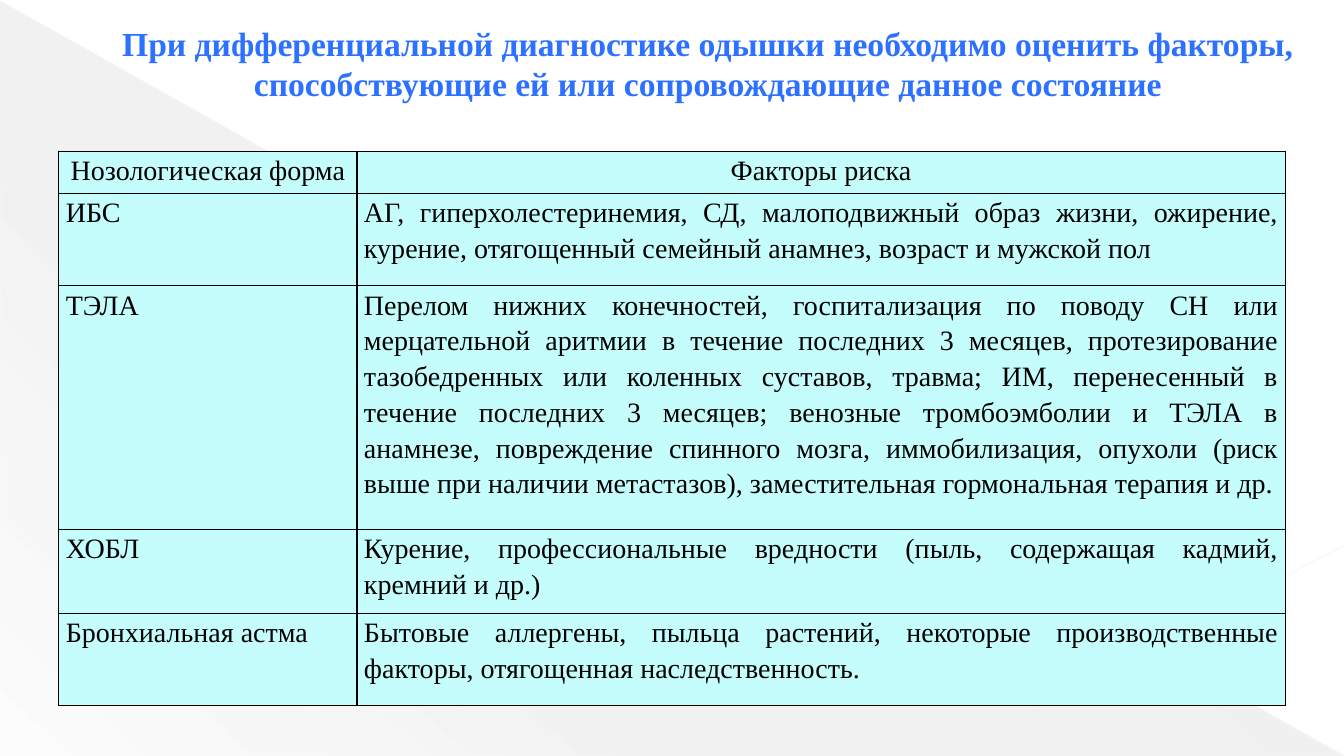
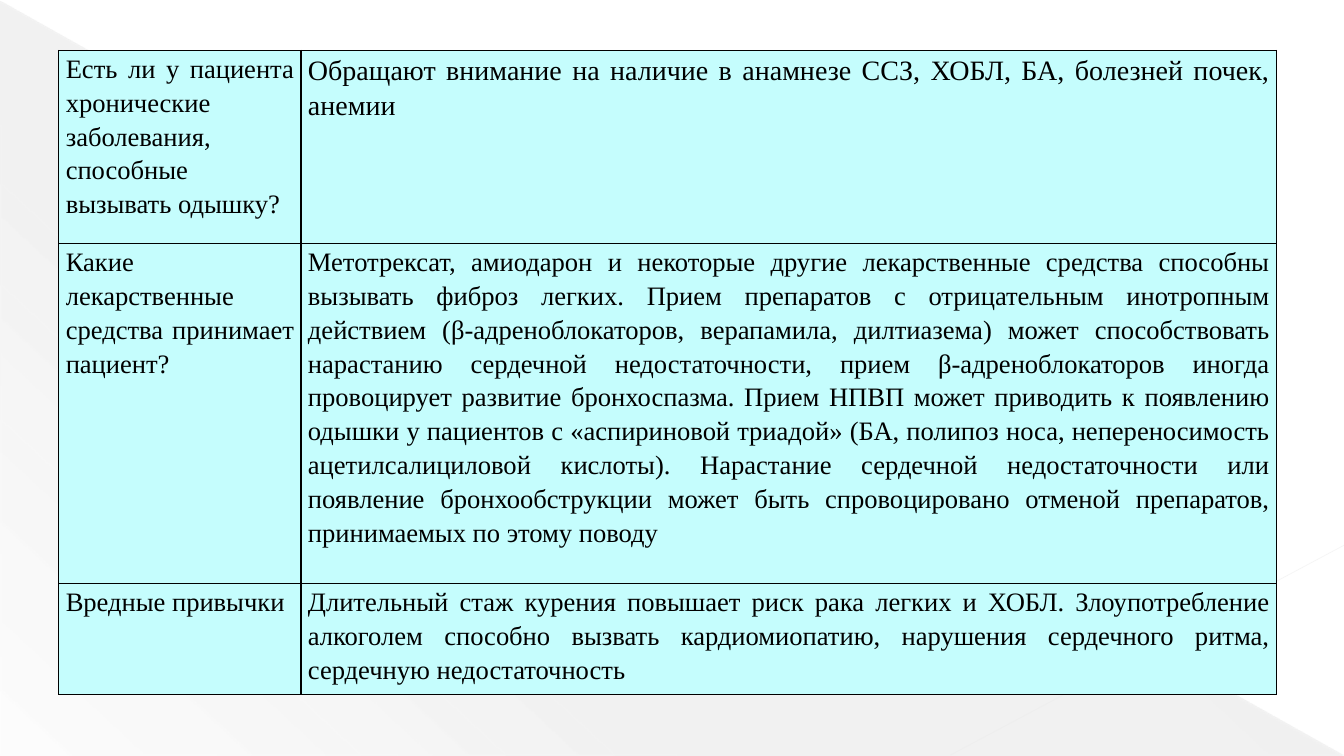
from dataclasses import dataclass

import pptx
import pptx.dml.color
import pptx.enum.dml
import pptx.enum.shapes
import pptx.enum.text
import pptx.oxml
import pptx.oxml.ns
import pptx.presentation
import pptx.slide
import pptx.table
import pptx.text.text
import pptx.util

Pt = pptx.util.Pt
Align = pptx.enum.text.PP_ALIGN
DRAWING_NS = pptx.oxml.ns.nsdecls("a")

FONT = "Times New Roman"
WHITE, BLACK, TITLE_BLUE, CELL_CYAN = "FFFFFF", "000000", "2C71FF", "C5FDFD"
SHADE = "666666"
SHADE_STOPS = ((0, 10), (70, 8), (100, 1))
SHADE_ANGLE = 133
SLIDE_WIDTH, SLIDE_HEIGHT = 960, 540
TABLE_LEFT = 42
CELL_INSET = 5


@dataclass(frozen=True)
class BackdropLine:
    start: tuple[float, float]
    end: tuple[float, float]
    color: str
    width: float
    opacity: int


@dataclass(frozen=True)
class CellText:
    text: str
    size: float = 20
    align: Align = Align.JUSTIFY


@dataclass(frozen=True)
class FactorTable:
    top: float
    columns: tuple[float, ...]
    row_heights: tuple[float, ...]
    rows: tuple[tuple[CellText, ...], ...]


BACKDROP_LINES = (
    BackdropLine((0, 0.72), (959, 539.3), "E8E8E8", 0.39, 35),
    BackdropLine((960, 389.5), (679, 539.3), "EAEAEA", 0.47, 45),
)

TITLE = (
    "При дифференциальной диагностике одышки необходимо оценить факторы,",
    "способствующие ей или сопровождающие данное состояние",
)

RISK_FACTORS = FactorTable(
    top=108,
    columns=(213, 663),
    row_heights=(30, 66, 174, 60, 66),
    rows=(
        (
            CellText("Нозологическая форма", align=Align.CENTER),
            CellText("Факторы риска", align=Align.CENTER),
        ),
        (
            CellText("ИБС"),
            CellText(
                "АГ, гиперхолестеринемия, СД, малоподвижный образ жизни, ожирение, "
                "курение, отягощенный семейный анамнез, возраст и мужской пол"
            ),
        ),
        (
            CellText("ТЭЛА"),
            CellText(
                "Перелом нижних конечностей, госпитализация по поводу СН или "
                "мерцательной аритмии в течение последних 3 месяцев, протезирование "
                "тазобедренных или коленных суставов, травма; ИМ, перенесенный в "
                "течение последних 3 месяцев; венозные тромбоэмболии и ТЭЛА в "
                "анамнезе, повреждение спинного мозга, иммобилизация, опухоли (риск "
                "выше при наличии метастазов), заместительная гормональная терапия и др."
            ),
        ),
        (
            CellText("ХОБЛ"),
            CellText(
                "Курение, профессиональные вредности (пыль, содержащая кадмий, "
                "кремний и др.)"
            ),
        ),
        (
            CellText("Бронхиальная астма"),
            CellText(
                "Бытовые аллергены, пыльца растений, некоторые производственные "
                "факторы, отягощенная наследственность."
            ),
        ),
    ),
)

PATIENT_QUESTIONS = FactorTable(
    top=36,
    columns=(173, 697),
    row_heights=(138, 243, 79),
    rows=(
        (
            CellText(
                "Есть ли у пациента хронические заболевания, способные вызывать одышку?",
                19,
            ),
            CellText(
                "Обращают внимание на наличие в анамнезе ССЗ, ХОБЛ, БА, болезней "
                "почек, анемии"
            ),
        ),
        (
            CellText("Какие лекарственные средства принимает пациент?", 19),
            CellText(
                "Метотрексат, амиодарон и некоторые другие лекарственные средства "
                "способны вызывать фиброз легких. Прием препаратов с отрицательным "
                "инотропным действием (β-адреноблокаторов, верапамила, дилтиазема) "
                "может способствовать нарастанию сердечной недостаточности, прием "
                "β-адреноблокаторов иногда провоцирует развитие бронхоспазма. Прием "
                "НПВП может приводить к появлению одышки у пациентов с «аспириновой "
                "триадой» (БА, полипоз носа, непереносимость ацетилсалициловой "
                "кислоты). Нарастание сердечной недостаточности или появление "
                "бронхообструкции может быть спровоцировано отменой препаратов, "
                "принимаемых по этому поводу",
                19,
            ),
        ),
        (
            CellText("Вредные привычки", 19),
            CellText(
                "Длительный стаж курения повышает риск рака легких и ХОБЛ. "
                "Злоупотребление алкоголем способно вызвать кардиомиопатию, нарушения "
                "сердечного ритма, сердечную недостаточность",
                19,
            ),
        ),
    ),
)


def rgb(value: str) -> pptx.dml.color.RGBColor:
    return pptx.dml.color.RGBColor.from_string(value)


def color_xml(value: str, opacity: int = 100) -> str:
    return f'<a:srgbClr val="{value}"><a:alpha val="{opacity * 1000}"/></a:srgbClr>'


def style_paragraph(
    paragraph: pptx.text.text._Paragraph, size: float, color: str, align: Align
) -> None:
    paragraph.alignment = align
    paragraph.font.name = FONT
    paragraph.font.size = Pt(size)
    paragraph.font.color.rgb = rgb(color)


def draw_backdrop(slide: pptx.slide.Slide) -> None:
    slide.background.fill.solid()
    slide.background.fill.fore_color.rgb = rgb(WHITE)
    corner = slide.shapes.add_shape(
        pptx.enum.shapes.MSO_SHAPE.RIGHT_TRIANGLE, Pt(0.72), Pt(1.4), Pt(958.6), Pt(538.6)
    )
    corner.shadow.inherit = False
    corner.line.fill.background()
    corner.fill.background()
    stops = "".join(
        f'<a:gs pos="{position * 1000}">{color_xml(SHADE, opacity)}</a:gs>'
        for position, opacity in SHADE_STOPS
    )
    gradient = pptx.oxml.parse_xml(
        f'<a:gradFill {DRAWING_NS} rotWithShape="1"><a:gsLst>{stops}</a:gsLst>'
        f'<a:lin ang="{SHADE_ANGLE * 60000}" scaled="0"/></a:gradFill>'
    )
    properties = corner._element.spPr
    properties.replace(properties.find(pptx.oxml.ns.qn("a:noFill")), gradient)
    for line in BACKDROP_LINES:
        draw_line(slide, line)


def draw_line(slide: pptx.slide.Slide, line: BackdropLine) -> None:
    ray = slide.shapes.add_connector(
        pptx.enum.shapes.MSO_CONNECTOR.STRAIGHT,
        *(Pt(value) for value in line.start + line.end),
    )
    ray.line.width = Pt(line.width)
    ray.line.color.rgb = rgb(line.color)
    properties = ray._element.spPr
    tint = properties.find(".//" + pptx.oxml.ns.qn("a:srgbClr"))
    tint.append(
        pptx.oxml.parse_xml(f'<a:alpha {DRAWING_NS} val="{line.opacity * 1000}"/>')
    )
    properties.append(pptx.oxml.parse_xml(f"<a:effectLst {DRAWING_NS}/>"))


def draw_title(slide: pptx.slide.Slide, lines: tuple[str, ...]) -> None:
    frame = slide.shapes.add_textbox(Pt(39.6), Pt(12), Pt(902), Pt(66)).text_frame
    frame.word_wrap = True
    frame.vertical_anchor = pptx.enum.text.MSO_ANCHOR.MIDDLE
    frame.text = "\n".join(lines)
    for paragraph in frame.paragraphs:
        style_paragraph(paragraph, 24, TITLE_BLUE, Align.CENTER)
        paragraph.font.bold = True
        paragraph._p.get_or_add_pPr().set("indent", str(Pt(30)))


def draw_borders(cell: pptx.table._Cell) -> None:
    properties = cell._tc.get_or_add_tcPr()
    for index, side in enumerate("LRTB"):
        border = pptx.oxml.parse_xml(
            f'<a:ln{side} {DRAWING_NS} w="{Pt(1)}"><a:solidFill>'
            f"{color_xml(BLACK)}</a:solidFill></a:ln{side}>"
        )
        properties.insert(index, border)


def fill_cell(cell: pptx.table._Cell, content: CellText) -> None:
    cell.margin_left = cell.margin_right = Pt(CELL_INSET)
    cell.margin_top = cell.margin_bottom = Pt(0)
    cell.fill.solid()
    cell.fill.fore_color.rgb = rgb(CELL_CYAN)
    draw_borders(cell)
    cell.text = content.text
    paragraph = cell.text_frame.paragraphs[0]
    style_paragraph(paragraph, content.size, BLACK, content.align)
    paragraph.line_spacing = 1.15


def draw_table(slide: pptx.slide.Slide, factors: FactorTable) -> None:
    table = slide.shapes.add_table(
        len(factors.rows),
        len(factors.columns),
        Pt(TABLE_LEFT),
        Pt(factors.top),
        Pt(sum(factors.columns)),
        Pt(sum(factors.row_heights)),
    ).table
    table.first_row = table.horz_banding = False
    for column, width in zip(table.columns, factors.columns):
        column.width = Pt(width)
    for row, height, contents in zip(table.rows, factors.row_heights, factors.rows):
        row.height = Pt(height)
        for cell, content in zip(row.cells, contents):
            fill_cell(cell, content)


def add_slide(deck: pptx.presentation.Presentation) -> pptx.slide.Slide:
    slide = deck.slides.add_slide(deck.slide_layouts[6])
    draw_backdrop(slide)
    return slide


def main() -> None:
    deck = pptx.Presentation()
    deck.slide_width, deck.slide_height = Pt(SLIDE_WIDTH), Pt(SLIDE_HEIGHT)

    risk_slide = add_slide(deck)
    draw_table(risk_slide, RISK_FACTORS)
    draw_title(risk_slide, TITLE)

    draw_table(add_slide(deck), PATIENT_QUESTIONS)

    deck.save("out.pptx")


if __name__ == "__main__":
    main()
